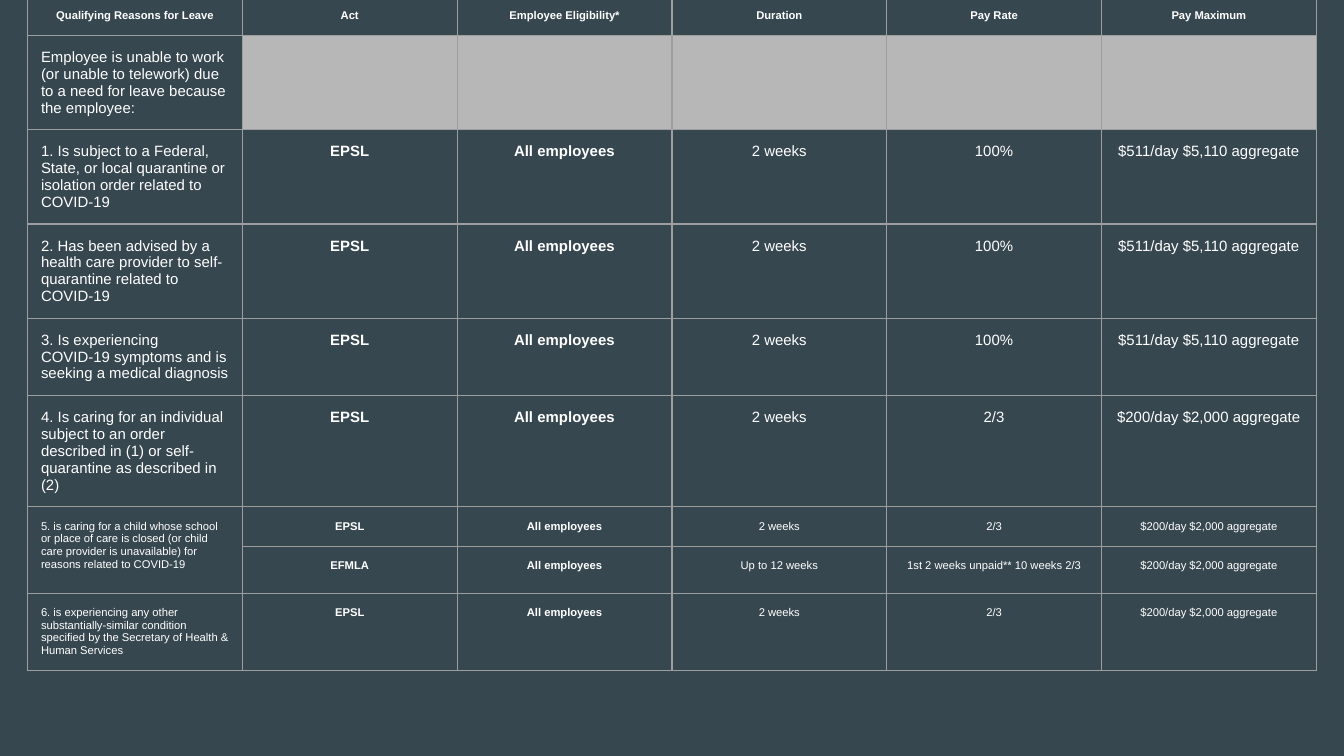
from dataclasses import dataclass

from lxml.etree import SubElement
from pptx import Presentation
from pptx.dml.color import RGBColor
from pptx.enum.text import PP_ALIGN
from pptx.oxml.ns import qn
from pptx.table import Table, _Cell
from pptx.util import Inches, Pt

SLIDE_WIDTH = Inches(10)
SLIDE_HEIGHT = SLIDE_WIDTH * 9 // 16
TABLE_WIDTH = Inches(9.59)
TABLE_HEIGHT = Inches(5.22)

BACKGROUND = "37474F"
BORDER = "9E9E9E"
UNUSED = "B7B7B7"
WHITE = "FFFFFF"

HEADINGS = ("Qualifying Reasons for Leave", "Act", "Employee Eligibility*",
            "Duration", "Pay Rate", "Pay Maximum")
BOLD_COLUMNS = (1, 2)  # Act and eligibility
FULL_PAY = "$511/day $5,110 aggregate"
PARTIAL_PAY = "$200/day $2,000 aggregate"


@dataclass
class LeaveRow:
    reason: str
    minimum_height: float  # inches; the row grows to fit its text
    size: int = 8
    act: str = "EPSL"
    eligibility: str = "All employees"
    duration: str = "2 weeks"
    rate: str = "2/3"
    maximum: str = PARTIAL_PAY

    def details(self) -> tuple[str, ...]:
        return self.act, self.eligibility, self.duration, self.rate, self.maximum


INTRODUCTION = ("Employee is unable to work (or unable to telework) due to "
                "a need for leave because the employee:")
LEAVE_ROWS = [
    LeaveRow("1. Is subject to a Federal, State, or local quarantine or isolation "
             "order related to COVID-19", 0.33, rate="100%", maximum=FULL_PAY),
    LeaveRow("2. Has been advised by a health care provider to self-quarantine "
             "related to COVID-19", 0.33, rate="100%", maximum=FULL_PAY),
    LeaveRow("3. Is experiencing COVID-19 symptoms and is seeking a medical "
             "diagnosis", 0.33, rate="100%", maximum=FULL_PAY),
    LeaveRow("4. Is caring for an individual subject to an order described in (1) "
             "or self-quarantine as described in (2)", 0.39),
    LeaveRow("5. is caring for a child whose school or place of care is closed "
             "(or child care provider is unavailable) for reasons related to "
             "COVID-19", 0, size=6),
    LeaveRow("", 0.35, size=6, act="EFMLA", duration="Up to 12 weeks",
             rate="1st 2 weeks unpaid** 10 weeks 2/3"),
    LeaveRow("6. is experiencing any other substantially-similar condition "
             "specified by the Secretary of Health & Human Services", 0.34, size=6),
]
ROW_HEIGHTS = [0, 0.47] + [row.minimum_height for row in LEAVE_ROWS]


def color(value: str) -> RGBColor:
    return RGBColor.from_string(value)


def set_borders(cell: _Cell) -> None:
    properties = cell._tc.get_or_add_tcPr()
    for position, side in enumerate(("a:lnL", "a:lnR", "a:lnT", "a:lnB")):
        line = SubElement(properties, qn(side), w=str(Pt(0.75)))
        properties.insert(position, line)  # borders come before the fill
        fill = SubElement(line, qn("a:solidFill"))
        SubElement(fill, qn("a:srgbClr"), val=BORDER)


def format_cell(cell: _Cell, fill: str | None = None) -> None:
    cell.margin_left = cell.margin_right = Inches(0.1)
    cell.margin_top = cell.margin_bottom = Inches(0.1)
    if fill:
        cell.fill.solid()
        cell.fill.fore_color.rgb = color(fill)
    else:
        cell.fill.background()
    set_borders(cell)


def write(cell: _Cell, text: str, *, size: int, bold: bool = False,
          alignment: PP_ALIGN = PP_ALIGN.CENTER) -> None:
    paragraph = cell.text_frame.paragraphs[0]
    paragraph.alignment = alignment
    run = paragraph.add_run()
    run.text = text
    run.font.name = "Arial"
    run.font.size = Pt(size)
    run.font.bold = bold
    run.font.color.rgb = color(WHITE)


def write_leave_row(table: Table, index: int, row: LeaveRow) -> None:
    if row.reason:
        write(table.cell(index, 0), row.reason, size=row.size, alignment=PP_ALIGN.LEFT)
    for column, text in enumerate(row.details(), start=1):
        write(table.cell(index, column), text, size=row.size,
              bold=column in BOLD_COLUMNS)


def main() -> None:
    presentation = Presentation()
    presentation.slide_width = SLIDE_WIDTH
    presentation.slide_height = SLIDE_HEIGHT
    slide = presentation.slides.add_slide(presentation.slide_layouts[6])
    slide.background.fill.solid()
    slide.background.fill.fore_color.rgb = color(BACKGROUND)

    # Table grid, centred across the slide
    frame = slide.shapes.add_table(len(ROW_HEIGHTS), len(HEADINGS),
                                   (SLIDE_WIDTH - TABLE_WIDTH) // 2, Inches(-0.03),
                                   TABLE_WIDTH, TABLE_HEIGHT)
    table = frame.table
    table.first_row = False
    table.horz_banding = False
    for row, height in zip(table.rows, ROW_HEIGHTS):
        row.height = Inches(height)
    frame.height = TABLE_HEIGHT
    for row_index in range(len(ROW_HEIGHTS)):
        for column in range(len(HEADINGS)):
            unused = row_index == 1 and column > 0
            format_cell(table.cell(row_index, column), UNUSED if unused else None)

    # Headings and introduction
    for column, heading in enumerate(HEADINGS):
        write(table.cell(0, column), heading, size=6, bold=True)
    write(table.cell(1, 0), INTRODUCTION, size=8, alignment=PP_ALIGN.LEFT)

    # Reasons for leave; the fifth covers two acts
    for index, leave_row in enumerate(LEAVE_ROWS, start=2):
        write_leave_row(table, index, leave_row)
    table.cell(6, 0).merge(table.cell(7, 0))

    presentation.save("out.pptx")


if __name__ == "__main__":
    main()
